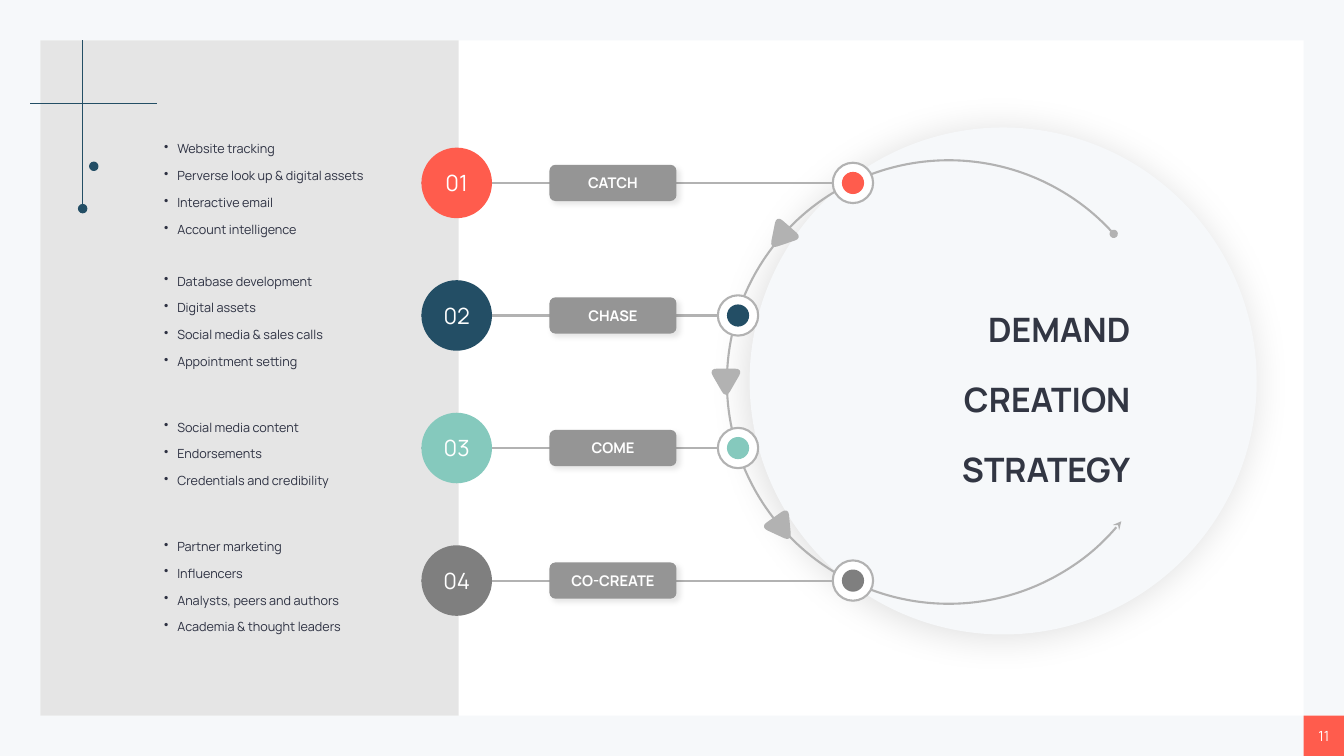
import math

import pptx
import pptx.dml.color
import pptx.enum.shapes
import pptx.enum.text
import pptx.oxml
import pptx.oxml.ns
import pptx.util
from pptx.util import Inches

FONT = "Manrope"
HUES = {
    "back": "F6F8FA", "white": "FFFFFF", "panel": "E5E5E5", "line": "B2B2B2",
    "label": "959595", "red": "FF5C4D", "navy": "234E65", "teal": "85C9BD",
    "gray": "7F7F7F", "ink": "2D3142", "title": "323643",
}
KIND = pptx.enum.shapes.MSO_SHAPE
ALIGN = pptx.enum.text.PP_ALIGN
ANCHOR = pptx.enum.text.MSO_ANCHOR
AUTO = pptx.enum.text.MSO_AUTO_SIZE

TOP, STEP = 1.815, 1.315
STAGES = [  # label, colour, centre of the ring, bullets
    ("CATCH", "red", 8.46, ["Website tracking", "Perverse look up & digital assets",
                            "Interactive email", "Account intelligence"]),
    ("CHASE", "navy", 7.32, ["Database development", "Digital assets",
                             "Social media & sales calls", "Appointment setting"]),
    ("COME", "teal", 7.32, ["Social media content", "Endorsements",
                            "Credentials and credibility"]),
    ("CO-CREATE", "gray", 8.46, ["Partner marketing", "Influencers",
                                 "Analysts, peers and authors",
                                 "Academia & thought leaders"]),
]
ARROWS = [(7.75, 2.34, 41.2), (7.2, 3.78, 0), (7.75, 5.23, -35.2)]


def rgb(hue):
    return pptx.dml.color.RGBColor.from_string(HUES[hue])


def node(parent, tag, **attrs):
    """Append a DrawingML element to parent and return it."""
    child = pptx.oxml.parse_xml(f"<a:{tag} {pptx.oxml.ns.nsdecls('a')}/>")
    for name, value in attrs.items():
        child.set(name, str(value))
    parent.append(child)
    return child


def paint(shape, fill=None, line=None, width=1.5):
    shape.shadow.inherit = False
    if fill:
        shape.fill.solid()
        shape.fill.fore_color.rgb = rgb(fill)
    else:
        shape.fill.background()
    if line:
        shape.line.color.rgb = rgb(line)
        shape.line.width = pptx.util.Pt(width)
    else:
        shape.line.fill.background()


def block(slide, kind, x, y, w, h, **look):
    shape = slide.shapes.add_shape(kind, Inches(x), Inches(y), Inches(w), Inches(h))
    paint(shape, **look)
    return shape


def disc(slide, x, y, size, **look):
    """Draw a circle centred on x, y."""
    return block(slide, KIND.OVAL, x - size / 2, y - size / 2, size, size, **look)


def rule(slide, x1, y1, x2, y2, hue, width):
    line = slide.shapes.add_connector(
        pptx.enum.shapes.MSO_CONNECTOR.STRAIGHT,
        Inches(x1), Inches(y1), Inches(x2), Inches(y2))
    line.line.color.rgb = rgb(hue)
    line.line.width = pptx.util.Pt(width)
    node(line.element.spPr, "effectLst")


def shade(shape, blur, angle, alpha):
    """Add a soft black shadow, with blur in points and alpha in percent."""
    effects = shape.element.spPr.find(pptx.oxml.ns.qn("a:effectLst"))
    outer = node(effects, "outerShdw", blurRad=int(pptx.util.Pt(blur)),
                 dist=int(pptx.util.Pt(3)), dir=angle * 60000, rotWithShape=0)
    node(node(outer, "srgbClr", val="000000"), "alpha", val=alpha * 1000)


def write(shape, *lines, size, hue="white", bold=False, align=ALIGN.CENTER,
          gap=None, bullet=False, grow=False):
    frame = shape.text_frame
    frame.word_wrap = True
    frame.vertical_anchor = ANCHOR.MIDDLE
    frame.auto_size = AUTO.SHAPE_TO_FIT_TEXT if grow else AUTO.NONE
    for i, line in enumerate(lines):
        para = frame.add_paragraph() if i else frame.paragraphs[0]
        para.alignment = align
        if gap:
            para.line_spacing = gap
        if bullet:
            props = para._p.get_or_add_pPr()
            props.set("marL", str(Inches(0.13)))
            props.set("indent", str(-Inches(0.13)))
            node(node(props, "buClr"), "srgbClr", val=HUES[hue])
            node(props, "buChar", char="•")
        run = para.add_run()
        run.text = line
        run.font.name = FONT
        run.font.size = pptx.util.Pt(size)
        run.font.bold = bold
        run.font.color.rgb = rgb(hue)


def arrow(slide, x, y, turn):
    """Draw a round-cornered triangle that points down, turned clockwise."""
    ends = [(-0.15, -0.11), (0.15, -0.11), (0, 0.15)]
    cos, sin = math.cos(math.radians(turn)), math.sin(math.radians(turn))
    dots = []
    for i, end in enumerate(ends):
        start, stop = ([c + 0.2 * (n - c) for c, n in zip(end, ends[j])]
                       for j in (i - 1, (i + 1) % 3))
        for t in (0, 0.25, 0.5, 0.75, 1):
            u, v = ((1 - t) ** 2 * a + 2 * t * (1 - t) * b + t * t * c
                    for a, b, c in zip(start, end, stop))
            dots.append((Inches(x + u * cos - v * sin), Inches(y + u * sin + v * cos)))
    form = slide.shapes.build_freeform(*dots[0])
    form.add_line_segments(dots[1:], close=True)
    paint(form.convert_to_shape(), "line", "line", 1.75)


def orbit(slide):
    arc = block(slide, KIND.ARC, 7.21, 1.59, 4.4, 4.4, line="line")
    arc.adjustments[0], arc.adjustments[1] = 133.157, 84.659
    arc.element.spPr.xfrm.set("flipH", "1")
    stroke = arc.element.spPr.find(pptx.oxml.ns.qn("a:ln"))
    node(stroke, "headEnd", type="oval")
    node(stroke, "tailEnd", type="stealth")


def stage(slide, rank, label, hue, ring, points):
    y = TOP + STEP * rank
    rule(slide, ring - 0.2, y, 4.18, y, "line", 1.5)
    write(disc(slide, 4.53, y, 0.7, fill=hue), f"{rank + 1:02}", size=16)
    disc(slide, ring, y, 0.4, fill="white", line="line")
    disc(slide, ring, y, 0.22, fill=hue)
    tag = block(slide, KIND.ROUNDED_RECTANGLE, 5.45, y - 0.18, 1.26, 0.36, fill="label")
    shade(tag, 4, 45, 10)
    write(tag, label, size=10.5, bold=True)
    high = 0.11 + 0.27 * len(points)
    box = slide.shapes.add_textbox(
        Inches(1.53), Inches(y - high / 2), Inches(2.28), Inches(high))
    write(box, *points, size=9, hue="ink", align=ALIGN.LEFT, gap=1.78,
          bullet=True, grow=True)


def heading(slide):
    title = slide.shapes.title
    title.left, title.top = Inches(8.14), Inches(2.9)
    title.width, title.height = Inches(3.17), Inches(1.82)
    write(title, "DEMAND CREATION STRATEGY", size=24, hue="title", bold=True,
          align=ALIGN.RIGHT, gap=1.74, grow=True)
    title.element.getparent().append(title.element)


def main():
    deck = pptx.Presentation()
    deck.slide_width, deck.slide_height = Inches(13.33), Inches(7.5)
    slide = deck.slides.add_slide(deck.slide_layouts[5])
    slide.background.fill.solid()
    slide.background.fill.fore_color.rgb = rgb("back")

    block(slide, KIND.RECTANGLE, 0.4, 0.4, 12.53, 6.7, fill="white")
    shade(disc(slide, 9.95, 3.78, 5.03, fill="back"), 26.9, 135, 12)
    block(slide, KIND.RECTANGLE, 0.4, 0.4, 4.15, 6.7, fill="panel")
    orbit(slide)
    for rank, row in enumerate(STAGES):
        stage(slide, rank, *row)
    for place in ARROWS:
        arrow(slide, *place)

    rule(slide, 0.3, 1.03, 1.56, 1.03, "navy", 0.75)
    rule(slide, 0.82, 0.4, 0.82, 2.09, "navy", 0.75)
    for x, y in [(0.93, 1.65), (0.82, 2.07)]:
        disc(slide, x, y, 0.08, fill="navy", line="navy", width=1)

    heading(slide)
    page = block(slide, KIND.RECTANGLE, 12.93, 7.1, 0.4, 0.4, fill="red")
    write(page, "11", size=10)
    deck.save("out.pptx")


if __name__ == "__main__":
    main()
